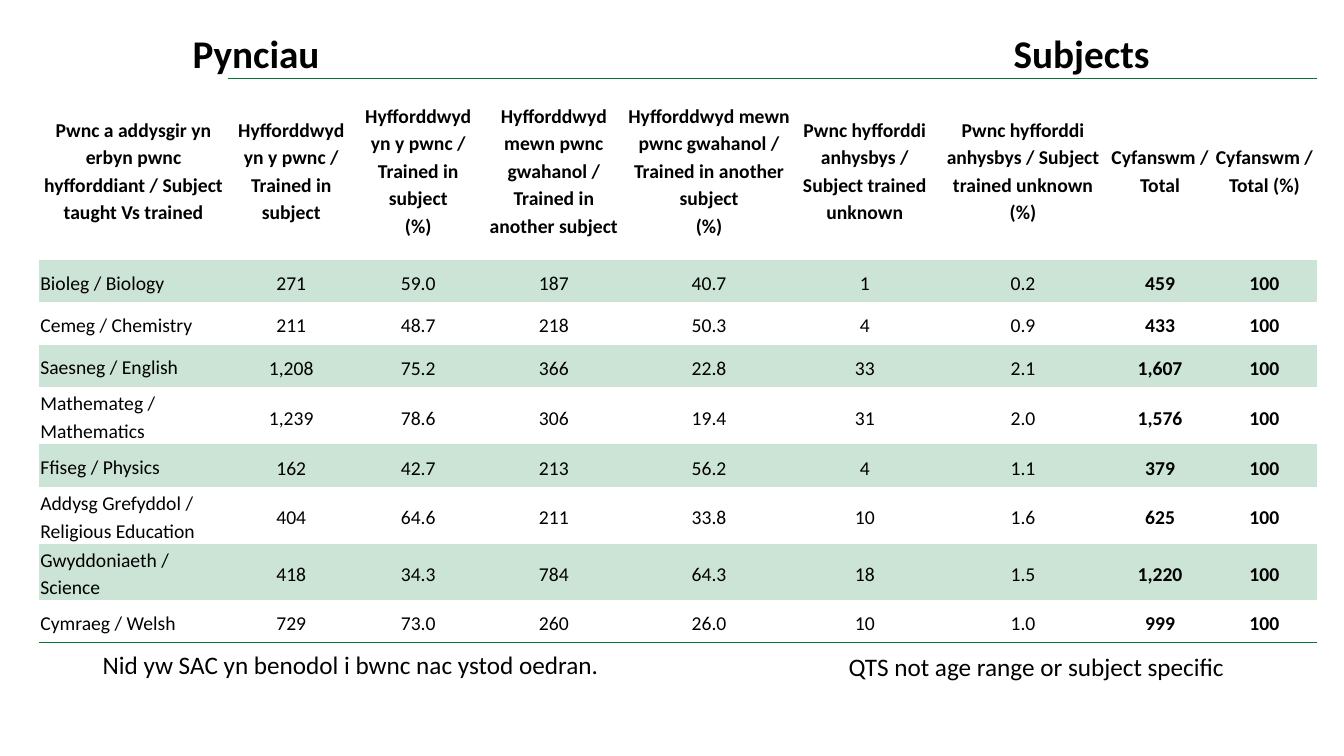
from dataclasses import dataclass

from lxml import etree
from pptx import Presentation
from pptx.dml.color import RGBColor
from pptx.enum.text import MSO_ANCHOR, MSO_AUTO_SIZE, PP_ALIGN
from pptx.oxml.ns import qn
from pptx.shapes.base import BaseShape
from pptx.slide import Slide
from pptx.table import Table, _Cell
from pptx.text.text import TextFrame, _Paragraph
from pptx.util import Pt

LEFT, CENTER = PP_ALIGN.LEFT, PP_ALIGN.CENTER
TOP, MIDDLE = MSO_ANCHOR.TOP, MSO_ANCHOR.MIDDLE
NO_AUTOFIT = MSO_AUTO_SIZE.NONE

FONT = "Calibri"
BLACK, GREEN, PALE_GREEN = "000000", "007A33", "CCE4D6"
NO_STYLE_NO_GRID = "{2D5ABB26-0587-4C30-8999-92F81FD0307C}"

TABLE_LEFT, TABLE_TOP = 28.08, 56.16
COLUMN_WIDTHS = [134.64, 90.72, 90.72, 102.96, 118.8, 103.68, 122.4, 73.44, 75.6]
HEADER_HEIGHT = 129.6
FIRST_TOTAL_COLUMN = 7

TRAINED = "Hyfforddwyd yn y pwnc / Trained in subject"
OTHER = "Hyfforddwyd mewn pwnc gwahanol / Trained in another subject"
UNKNOWN = "Pwnc hyfforddi anhysbys / Subject trained unknown"
HEADINGS = [
    ["Pwnc a addysgir yn erbyn pwnc hyfforddiant / Subject taught Vs trained"],
    [TRAINED],
    [TRAINED, "(%)"],
    [OTHER],
    [OTHER, "(%)"],
    [UNKNOWN],
    [UNKNOWN, "(%)"],
    ["Cyfanswm / Total"],
    ["Cyfanswm / Total (%)"],
]


@dataclass
class Label:
    text: str
    left: float
    top: float
    width: float
    height: float
    size: float
    bold: bool
    align: PP_ALIGN
    anchor: MSO_ANCHOR


@dataclass
class Subject:
    name: str
    values: list[str]
    height: float = 30.24


TITLE = Label("Pynciau", 97.92, 9.36, 169.92, 56.16, 28, True, CENTER, MIDDLE)
LABELS = [
    Label("Nid yw SAC yn benodol i bwnc nac ystod oedran.",
          66.24, 460.08, 380.16, 51.12, 18, False, LEFT, TOP),
    Label("Subjects", 687.6, 9.36, 169.92, 56.16, 28, True, CENTER, MIDDLE),
    Label("QTS not age range or subject specific",
          599.04, 461.52, 380.16, 51.12, 18, False, LEFT, TOP),
]
SUBJECTS = [
    Subject("Bioleg / Biology", ["271", "59.0", "187", "40.7", "1", "0.2", "459", "100"]),
    Subject("Cemeg / Chemistry", ["211", "48.7", "218", "50.3", "4", "0.9", "433", "100"]),
    Subject("Saesneg / English", ["1,208", "75.2", "366", "22.8", "33", "2.1", "1,607", "100"]),
    Subject("Mathemateg / Mathematics",
            ["1,239", "78.6", "306", "19.4", "31", "2.0", "1,576", "100"], 41.04),
    Subject("Ffiseg / Physics", ["162", "42.7", "213", "56.2", "4", "1.1", "379", "100"]),
    Subject("Addysg Grefyddol / Religious Education",
            ["404", "64.6", "211", "33.8", "10", "1.6", "625", "100"], 41.04),
    Subject("Gwyddoniaeth / Science",
            ["418", "34.3", "784", "64.3", "18", "1.5", "1,220", "100"], 38.16),
    Subject("Cymraeg / Welsh", ["729", "73.0", "260", "26.0", "10", "1.0", "999", "100"]),
]


def color(value: str) -> RGBColor:
    return RGBColor.from_string(value)


def add_span(para: _Paragraph, text: str, size: float, bold: bool) -> None:
    span = para.add_run()
    span.text = text
    span.font.name = FONT
    span.font.size = Pt(size)
    span.font.bold = bold
    span.font.color.rgb = color(BLACK)


def fill_label(box: BaseShape, label: Label) -> None:
    box.left, box.top = Pt(label.left), Pt(label.top)
    box.width, box.height = Pt(label.width), Pt(label.height)
    frame: TextFrame = box.text_frame
    frame.word_wrap = True
    frame.auto_size = NO_AUTOFIT
    frame.vertical_anchor = label.anchor
    para = frame.paragraphs[0]
    para.alignment = label.align
    add_span(para, label.text, label.size, label.bold)


def add_label(page: Slide, label: Label) -> None:
    box = page.shapes.add_textbox(
        Pt(label.left), Pt(label.top), Pt(label.width), Pt(label.height))
    fill_label(box, label)


def fill_cell(cell: _Cell, lines: list[str], bold: bool, align: PP_ALIGN,
              spacing: float, after: float, fill: str | None) -> None:
    cell.margin_left = cell.margin_right = cell.margin_top = Pt(0.72)
    cell.margin_bottom = Pt(0)
    cell.vertical_anchor = MIDDLE
    if fill:
        cell.fill.solid()
        cell.fill.fore_color.rgb = color(fill)
    else:
        cell.fill.background()
    frame = cell.text_frame
    for index, line in enumerate(lines):
        para = frame.add_paragraph() if index else frame.paragraphs[0]
        para.alignment = align
        para.line_spacing = spacing
        para.space_after = Pt(after)
        add_span(para, line, 14, bold)


def add_border(cell: _Cell, tag: str) -> None:
    line = etree.Element(qn(tag), w=str(Pt(1)))
    solid = etree.SubElement(line, qn("a:solidFill"))
    etree.SubElement(solid, qn("a:srgbClr"), val=GREEN)
    cell._tc.get_or_add_tcPr().insert(0, line)


def fill_header(table: Table) -> None:
    for column, lines in enumerate(HEADINGS):
        cell = table.cell(0, column)
        fill_cell(cell, lines, True, CENTER, 1.15, 0, None)
        if column:
            add_border(cell, "a:lnT")


def fill_subject(table: Table, row: int, subject: Subject) -> None:
    fill = PALE_GREEN if row % 2 else None
    fill_cell(table.cell(row, 0), [subject.name], False, LEFT, 1.15, 0, fill)
    for column, value in enumerate(subject.values, start=1):
        bold = column >= FIRST_TOTAL_COLUMN
        fill_cell(table.cell(row, column), [value], bold, CENTER, 1.19, 14, fill)


def add_subject_table(page: Slide) -> None:
    heights = [HEADER_HEIGHT] + [subject.height for subject in SUBJECTS]
    holder = page.shapes.add_table(
        len(heights), len(COLUMN_WIDTHS), Pt(TABLE_LEFT), Pt(TABLE_TOP),
        Pt(sum(COLUMN_WIDTHS)), Pt(sum(heights)))
    table = holder.table
    table.first_row = table.horz_banding = False
    for style in holder.element.iter(qn("a:tableStyleId")):
        style.text = NO_STYLE_NO_GRID
    for column, width in zip(table.columns, COLUMN_WIDTHS):
        column.width = Pt(width)
    for row, height in zip(table.rows, heights):
        row.height = Pt(height)
    fill_header(table)
    for row, subject in enumerate(SUBJECTS, start=1):
        fill_subject(table, row, subject)
    for cell in table.rows[len(SUBJECTS)].cells:
        add_border(cell, "a:lnB")


def main() -> None:
    deck = Presentation()
    deck.slide_width, deck.slide_height = Pt(960), Pt(540)
    page = deck.slides.add_slide(deck.slide_layouts[5])
    fill_label(page.shapes.title, TITLE)
    add_subject_table(page)
    for label in LABELS:
        add_label(page, label)
    deck.save("out.pptx")


if __name__ == "__main__":
    main()
